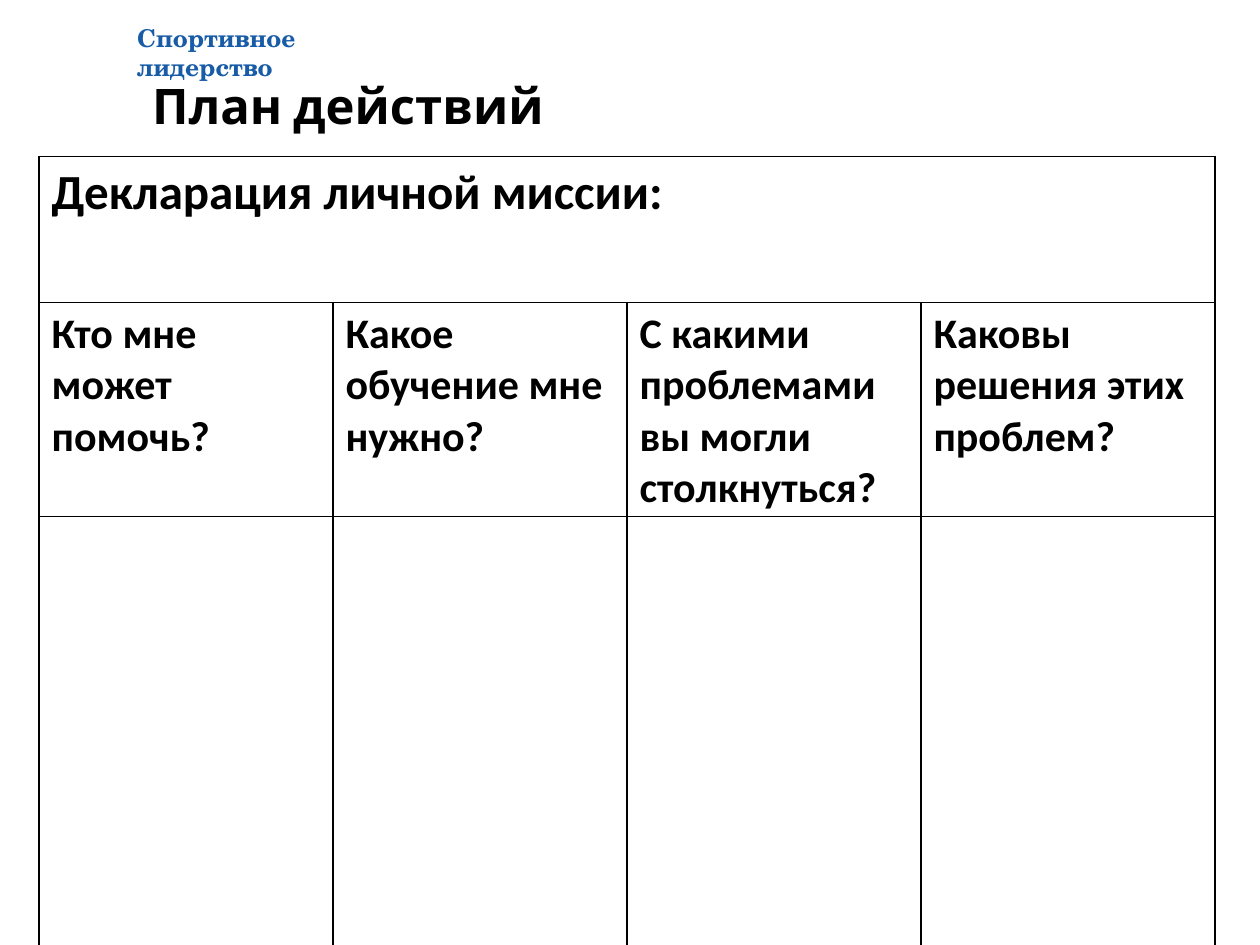
from lxml import etree
from pptx import Presentation
from pptx import util as u
from pptx.dml import color as c
from pptx.enum import text as t
from pptx.oxml import ns

HUES = {"ink": "000000", "blue": "185CA7"}
ASKS = [
    "Кто мне может помочь?",
    "Какое обучение мне нужно?",
    "С какими проблемами вы могли столкнуться?",
    "Каковы решения этих проблем?",
]
ROWS = [83.5, 121.7, 267.1]
WIDTH = 168


def add_run(frame, words, size, face, hue="ink"):
    """Add one bold run to the first paragraph of a frame."""
    run = frame.paragraphs[0].add_run()
    run.text = words
    run.font.size = u.Pt(size)
    run.font.name = face
    run.font.bold = True
    run.font.color.rgb = c.RGBColor.from_string(HUES[hue])


def add_label(slide, area, words, size, face, hue="ink"):
    """Add a wrapped text box with one run."""
    frame = slide.shapes.add_textbox(*map(u.Pt, area)).text_frame
    frame.word_wrap = True
    frame.vertical_anchor = t.MSO_ANCHOR.TOP
    add_run(frame, words, size, face, hue)


def rule_cell(cell):
    """Give a cell four thin borders and no fill."""
    props = cell._tc.get_or_add_tcPr()
    for side in ("lnL", "lnR", "lnT", "lnB"):
        line = etree.SubElement(props, ns.qn(f"a:{side}"), w=str(u.Pt(0.96)))
        fill = etree.SubElement(line, ns.qn("a:solidFill"))
        etree.SubElement(fill, ns.qn("a:srgbClr"), val=HUES["ink"])
    cell.fill.background()


def add_plan(slide):
    """Add the table with the mission row, the questions and room for answers."""
    area = (22.3, 89.3, WIDTH * len(ASKS), sum(ROWS))
    grid = slide.shapes.add_table(len(ROWS), len(ASKS), *map(u.Pt, area)).table
    for row, tall in zip(grid.rows, ROWS):
        row.height = u.Pt(tall)
    for col in grid.columns:
        col.width = u.Pt(WIDTH)
    for cell in grid.iter_cells():
        rule_cell(cell)
    head = grid.cell(0, 0)
    head.merge(grid.cell(0, len(ASKS) - 1))
    add_run(head.text_frame, "Декларация личной миссии:", 28, "Calibri")
    for col, ask in enumerate(ASKS):
        add_run(grid.cell(1, col).text_frame, ask, 24, "Calibri")


def main():
    """Build and save the slide."""
    deck = Presentation()
    deck.slide_width, deck.slide_height = u.Pt(720), u.Pt(540)
    slide = deck.slides.add_slide(deck.slide_layouts[6])
    add_label(slide, (79.9, 39.6, 468.7, 23), "План действий", 28, "Cabin")
    add_plan(slide)
    add_label(slide, (71.3, 9.4, 160.6, 23.8), "Спортивное лидерство", 14,
              "TeX Gyre Schola", "blue")
    deck.save("out.pptx")


if __name__ == "__main__":
    main()
